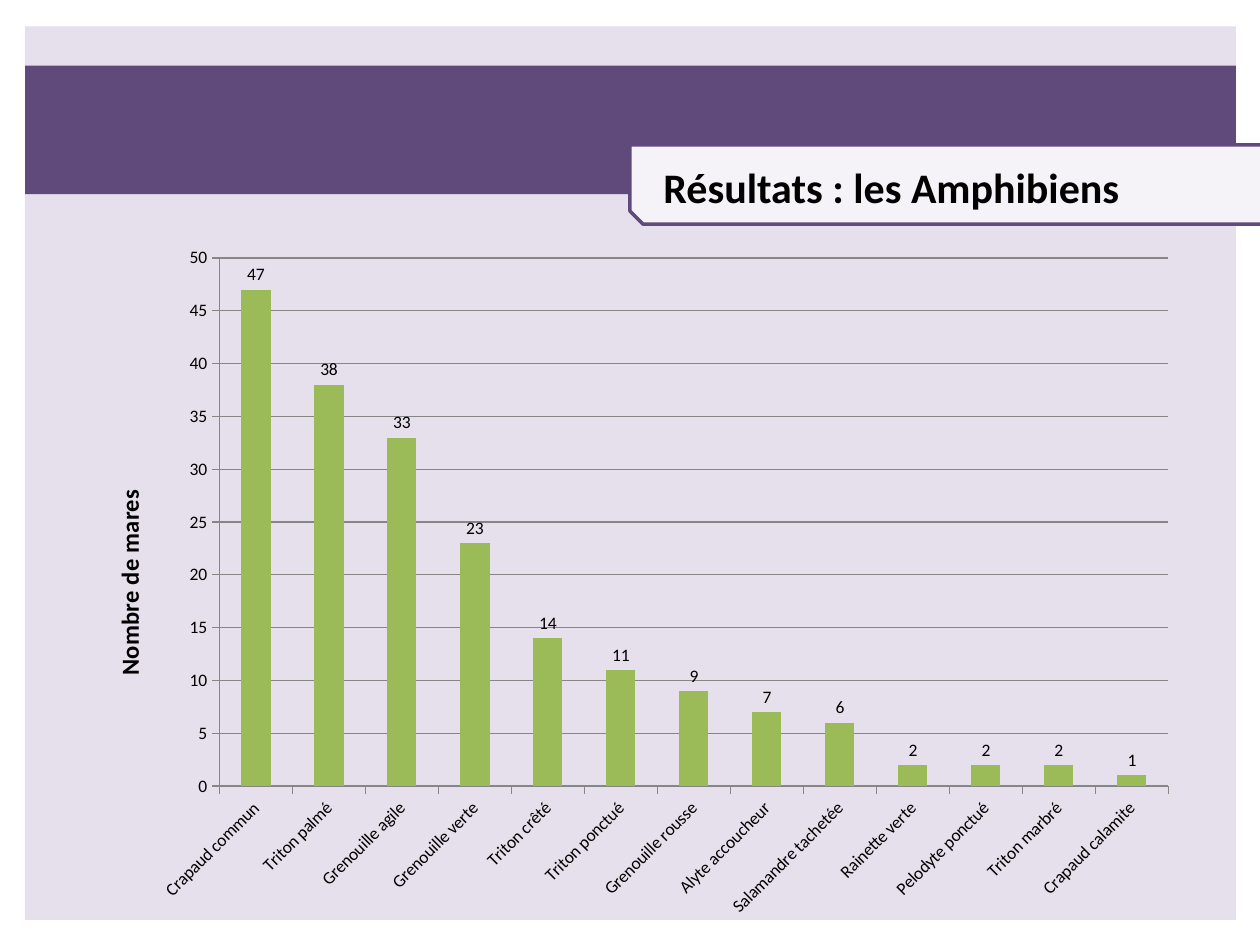
"""Builds the slide on amphibian survey results, with a column chart."""
from pptx import Presentation
from pptx.chart.data import CategoryChartData
from pptx.dml.color import RGBColor
from pptx.enum.chart import XL_CHART_TYPE as ChartType
from pptx.enum.chart import XL_LABEL_POSITION as LabelPos
from pptx.enum.chart import XL_TICK_MARK as Tick
from pptx.enum.shapes import MSO_SHAPE as Shape
from pptx.enum.text import PP_ALIGN as Align
from pptx.oxml import parse_xml
from pptx.oxml.ns import nsdecls
from pptx.util import Inches, Pt

LILAC = RGBColor(0xE6, 0xE0, 0xEC)
PURPLE = RGBColor(0x60, 0x4A, 0x7B)
PALE = RGBColor(0xF5, 0xF3, 0xF7)
GREEN = RGBColor(0x9B, 0xBB, 0x59)
GREY = RGBColor(0x86, 0x86, 0x86)
BLACK = RGBColor(0, 0, 0)
FONT = "Calibri"

POND_COUNTS = {
    "Crapaud commun": 47,
    "Triton palmé": 38,
    "Grenouille agile": 33,
    "Grenouille verte": 23,
    "Triton crêté": 14,
    "Triton ponctué": 11,
    "Grenouille rousse": 9,
    "Alyte accoucheur": 7,
    "Salamandre tachetée": 6,
    "Rainette verte": 2,
    "Pelodyte ponctué": 2,
    "Triton marbré": 2,
    "Crapaud calamite": 1,
}


def set_font(font, size, bold=False, color=BLACK):
    font.name, font.size, font.bold = FONT, Pt(size), bold
    font.color.rgb = color


def write_text(tf, text, size, bold=False, color=BLACK, align=Align.CENTER):
    p = tf.paragraphs[0]
    p.alignment = align
    r = p.add_run()
    r.text = text
    set_font(r.font, size, bold, color)


def add_panel(s, box, fill, shape=Shape.RECTANGLE, line=None):
    sp = s.shapes.add_shape(shape, *map(Inches, box))
    sp.shadow.inherit = False
    sp.fill.solid()
    sp.fill.fore_color.rgb = fill
    if line is None:
        sp.line.fill.background()
    else:
        sp.line.color.rgb = line
        sp.line.width = Pt(2)


def add_title(s, box, text):
    tf = s.shapes.add_textbox(*map(Inches, box)).text_frame
    tf.word_wrap = True
    write_text(tf, text, 24, bold=True)


def set_layout(parent, index, inner=False, **places):
    """Places a chart part by fractions of the chart frame."""
    for old in parent.xpath("c:layout"):
        parent.remove(old)
    target = '<c:layoutTarget val="inner"/>' if inner else ""
    modes = '<c:xMode val="edge"/><c:yMode val="edge"/>'
    values = "".join(f'<c:{key} val="{value}"/>' for key, value in places.items())
    parent.insert(index, parse_xml(
        f'<c:layout {nsdecls("c")}><c:manualLayout>{target}{modes}{values}'
        "</c:manualLayout></c:layout>"))


def rotate_text(root, query, degrees):
    for body in root.xpath(query):
        body.set("rot", str(degrees * 60000))
        body.set("vert", "horz")


def style_axis(axis):
    axis.major_tick_mark, axis.minor_tick_mark = Tick.OUTSIDE, Tick.NONE
    axis.format.line.color.rgb = GREY
    set_font(axis.tick_labels.font, 10)


def add_column_chart(s, box, counts, axis_title):
    data = CategoryChartData()
    data.categories = list(counts)
    data.add_series("Series 1", list(counts.values()))
    chart = s.shapes.add_chart(
        ChartType.COLUMN_CLUSTERED, *map(Inches, box), data).chart
    chart.has_legend = chart.has_title = False
    set_font(chart.font, 10)

    plot = chart.plots[0]
    plot.gap_width = 150
    plot.vary_by_categories = False
    fill = plot.series[0].format.fill
    fill.solid()
    fill.fore_color.rgb = GREEN
    plot.has_data_labels = True
    labels = plot.data_labels
    labels.show_value = True
    labels.position = LabelPos.OUTSIDE_END
    set_font(labels.font, 10)

    values = chart.value_axis
    for axis in (chart.category_axis, values):
        style_axis(axis)
    values.minimum_scale, values.maximum_scale, values.major_unit = 0, 50, 5
    values.has_major_gridlines = True
    values.major_gridlines.format.line.color.rgb = GREY
    write_text(values.axis_title.text_frame, axis_title, 14, bold=True)

    root = chart.element
    rotate_text(root, ".//c:catAx/c:txPr/a:bodyPr", -45)
    rotate_text(root, ".//c:valAx/c:title//a:bodyPr", -90)
    set_layout(root.xpath(".//c:valAx/c:title")[0], 1, x=0.03, y=0.36)
    set_layout(root.xpath(".//c:plotArea")[0], 0, inner=True,
               x=0.13, y=0.034, w=0.85, h=0.758)


def main():
    prs = Presentation()
    prs.slide_width, prs.slide_height = Inches(10), Inches(7.5)
    s = prs.slides.add_slide(prs.slide_layouts[6])
    add_panel(s, (0.2, 0.21, 9.61, 7.09), LILAC)
    add_panel(s, (0.2, 0.52, 9.61, 1.02), PURPLE)
    add_panel(s, (5, 1.15, 5.2, 0.63), PALE, Shape.SNIP_2_DIAG_RECTANGLE, PURPLE)
    add_title(s, (4.77, 1.23, 4.61, 0.5), "Résultats : les Amphibiens")
    add_column_chart(s, (0.59, 1.86, 8.86, 5.53), POND_COUNTS, "Nombre de mares")
    prs.save("out.pptx")


if __name__ == "__main__":
    main()
